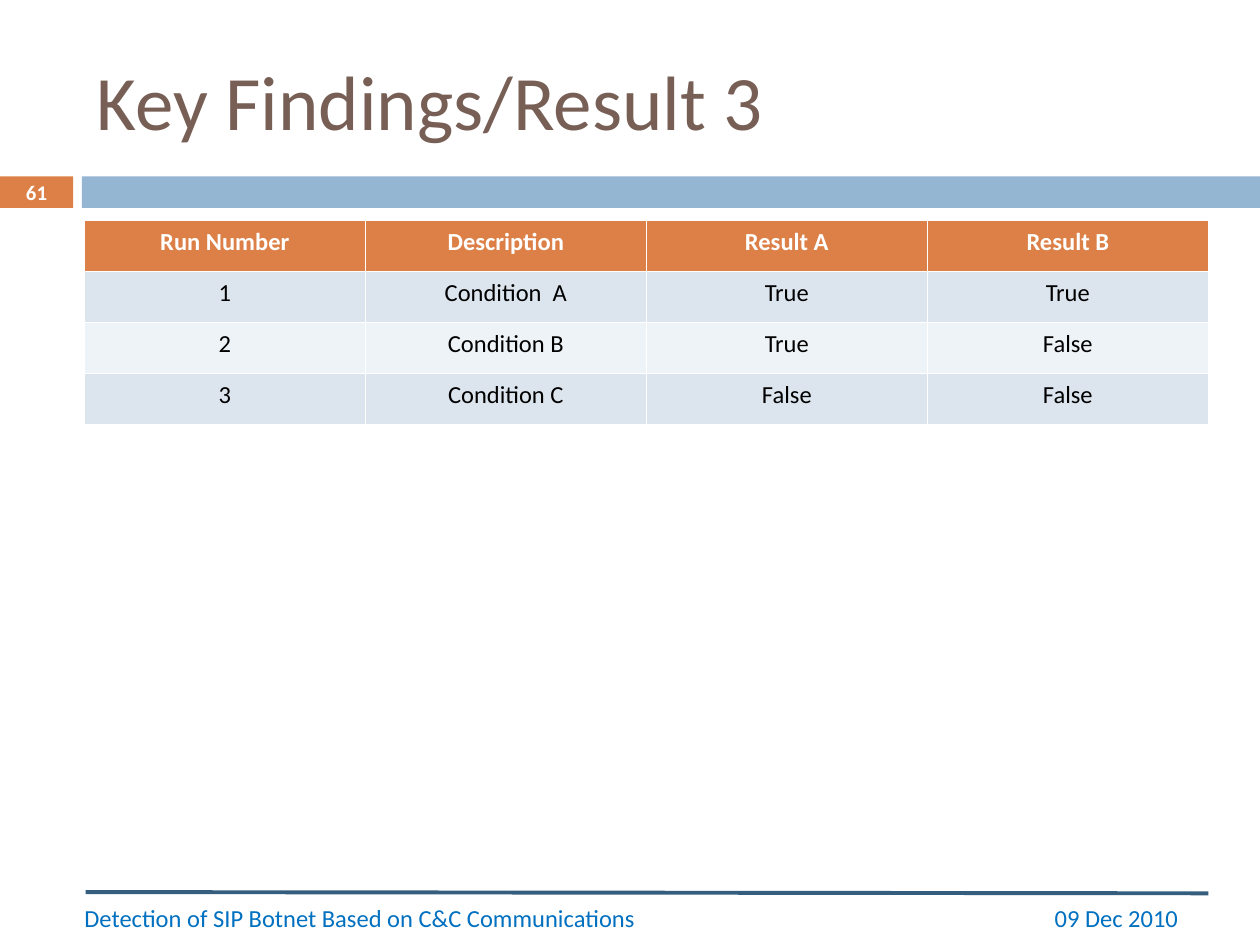
import pptx
import pptx.dml.color
import pptx.enum.shapes
import pptx.enum.text
import pptx.oxml.ns
import pptx.util
from lxml import etree

COLS, ROWS = 100, 75
LEFT, WIDTH = 6.7, 89.2
BAND_TOP, BAND_HEIGHT = 14, 2.5
ORANGE, BLUE, NAVY = "DD8047", "94B6D2", "355D7E"
BROWN, LINK_BLUE, WHITE, BLACK = "775F55", "0070C0", "FFFFFF", "000000"
STRIPES = ["DCE5EE", "EEF3F7"]
ALIGN = pptx.enum.text.PP_ALIGN
MIDDLE = pptx.enum.text.MSO_ANCHOR.MIDDLE

RESULTS = [
    ["Run Number", "Description", "Result A", "Result B"],
    ["1", "Condition  A", "True", "True"],
    ["2", "Condition B", "True", "False"],
    ["3", "Condition C", "False", "False"],
]


def rgb(value):
    return pptx.dml.color.RGBColor.from_string(value)


def paint(fill, color):
    fill.solid()
    fill.fore_color.rgb = rgb(color)


class Deck:
    font = "Calibri"

    def __init__(self, prs):
        self.col = prs.slide_width / COLS
        self.row = prs.slide_height / ROWS
        self.s = prs.slides.add_slide(prs.slide_layouts[6])

    def place(self, x, y, w, h):
        return (round(x * self.col), round(y * self.row),
                round(w * self.col), round(h * self.row))

    def label(self, tf, text, size, color, bold=False, align=ALIGN.LEFT):
        p = tf.paragraphs[0]
        p.alignment = align
        r = p.add_run()
        r.text = text
        style = {"name": self.font, "size": pptx.util.Pt(size), "bold": bold}
        for key, value in style.items():
            setattr(r.font, key, value)
        r.font.color.rgb = rgb(color)

    def text(self, box, text, size, color, inset=1, **style):
        tf = self.s.shapes.add_textbox(*self.place(*box)).text_frame
        frame = {"word_wrap": True, "vertical_anchor": MIDDLE,
                 "margin_left": round(inset * self.col)}
        for key, value in frame.items():
            setattr(tf, key, value)
        self.label(tf, text, size, color, **style)

    def bar(self, box, color):
        kind = pptx.enum.shapes.MSO_SHAPE.RECTANGLE
        sp = self.s.shapes.add_shape(kind, *self.place(*box))
        sp.shadow.inherit = False
        paint(sp.fill, color)
        sp.line.fill.background()

    def rule(self, x, y, w, h, color, weight):
        left, top, width, height = self.place(x, y, w, h)
        kind = pptx.enum.shapes.MSO_CONNECTOR.STRAIGHT
        line = self.s.shapes.add_connector(
            kind, left, top, left + width, top + height)
        line.line.color.rgb = rgb(color)
        line.line.width = pptx.util.Pt(weight)
        etree.SubElement(line._element.spPr, pptx.oxml.ns.qn("a:effectLst"))

    def table(self, box, data, size):
        table = self.s.shapes.add_table(
            len(data), len(data[0]), *self.place(*box)).table
        for i, values in enumerate(data):
            header = i == 0
            fill = ORANGE if header else STRIPES[(i - 1) % 2]
            for j, value in enumerate(values):
                cell = table.cell(i, j)
                paint(cell.fill, fill)
                self.label(cell.text_frame, value, size,
                           WHITE if header else BLACK, header, ALIGN.CENTER)


def main():
    prs = pptx.Presentation()
    prs.slide_width = pptx.util.Inches(10)
    prs.slide_height = pptx.util.Inches(7.5)
    deck = Deck(prs)
    number_box = (0, BAND_TOP, 5.8, BAND_HEIGHT)
    deck.bar(number_box, ORANGE)
    deck.bar((6.5, BAND_TOP, 93.5, BAND_HEIGHT), BLUE)
    deck.rule(6.8, 70.8, 89.1, 0.1, NAVY, 2.25)
    deck.text((LEFT, 2.5, WIDTH, 10.8), "Key Findings/Result 3", 44, BROWN)
    deck.table((LEFT, 17.5, WIDTH, 16.2), RESULTS, 14)
    deck.text((66.7, 70.8, 29.2, 4), "09 Dec 2010", 14, LINK_BLUE, inset=17)
    deck.text(number_box, "61", 11.9, WHITE, bold=True, align=ALIGN.CENTER)
    deck.text((LEFT, 70.8, 59.3, 4),
              "Detection of SIP Botnet Based on C&C Communications",
              14, LINK_BLUE, inset=0)
    prs.save("out.pptx")


if __name__ == "__main__":
    main()
